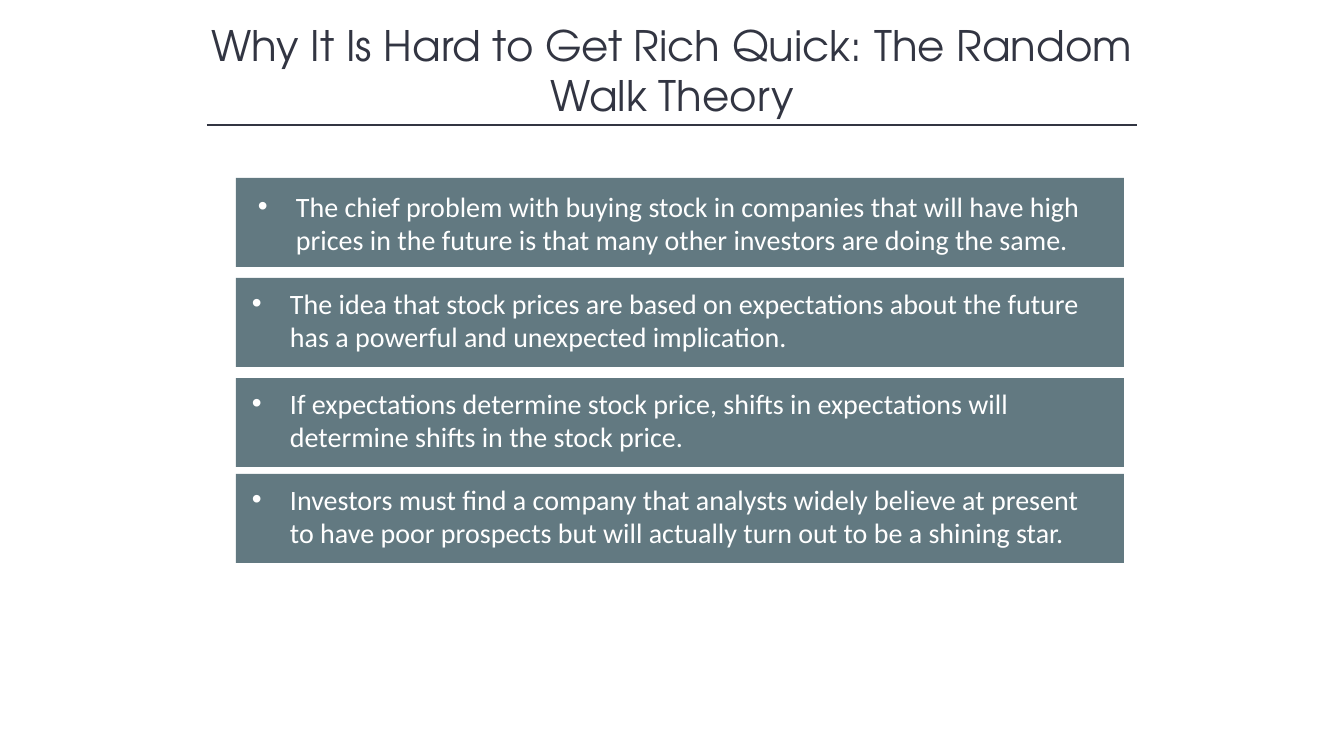
"""Build the random walk theory slide: a ruled title above four bulleted bars."""
from lxml.etree import SubElement
from pptx import Presentation
from pptx.dml.color import RGBColor
from pptx.enum.shapes import MSO_CONNECTOR, MSO_SHAPE
from pptx.enum.text import MSO_ANCHOR, PP_ALIGN
from pptx.oxml.ns import qn
from pptx.util import Pt

TITLE = "Why It Is Hard to Get Rich Quick: The Random Walk Theory"
POINTS = [
    (178, 12, 6, "The chief problem with buying stock in companies that will have high "
     "prices in the future is that many other investors are doing the same."),
    (278, 6, 3, "The idea that stock prices are based on expectations about the future "
     "has a powerful and unexpected implication."),
    (378, 6, 3, "If expectations determine stock price, shifts in expectations will "
     "determine shifts in the stock price."),
    (474, 6, 3, "Investors must find a company that analysts widely believe at present "
     "to have poor prospects but will actually turn out to be a shining star."),
]
BAR_LEFT, BAR_W, BAR_H = 236, 888, 89
TEXT_W, TEXT_H = 861, 78
INDENT = 38

INK = RGBColor(0x32, 0x35, 0x42)
SLATE = RGBColor(0x62, 0x79, 0x81)
WHITE = RGBColor(0xFF, 0xFF, 0xFF)


def px(*lengths):
    return [round(n * 914400 / 100.8) for n in lengths]


def put_text(shape, text, size, font, color, align=PP_ALIGN.LEFT,
             anchor=MSO_ANCHOR.TOP, bullet=None):
    tf = shape.text_frame
    tf.word_wrap = True
    tf.vertical_anchor = anchor
    tf.margin_left, tf.margin_right, tf.margin_top, tf.margin_bottom = px(10, 10, 5, 5)
    p = tf.paragraphs[0]
    p.alignment = align
    p.line_spacing = 1.0
    p.space_before = Pt(0)
    if bullet:
        pPr = p._p.get_or_add_pPr()
        indent = px(INDENT)[0]
        pPr.set("marL", str(indent))
        pPr.set("indent", str(-indent))
        SubElement(pPr, qn("a:buFont"), typeface="Arial")
        SubElement(pPr, qn("a:buChar"), char=bullet)
    r = p.add_run()
    r.text = text
    r.font.size = Pt(size)
    r.font.name = font
    r.font.color.rgb = color


def add_bar(shapes, left, top, width, height):
    sp = shapes.add_shape(MSO_SHAPE.RECTANGLE, *px(left, top, width, height))
    sp.shadow.inherit = False
    sp.fill.solid()
    sp.fill.fore_color.rgb = SLATE
    sp.line.fill.background()
    return sp


def main():
    prs = Presentation()
    prs.slide_width, prs.slide_height = px(1344, 756)
    s = prs.slides.add_slide(prs.slide_layouts[5])

    title = s.shapes.title
    title.left, title.top, title.width, title.height = px(168, 14, 1008, 112)
    put_text(title, TITLE, 30, "TeX Gyre Adventor", INK,
             align=PP_ALIGN.CENTER, anchor=MSO_ANCHOR.MIDDLE)

    rule = s.shapes.add_connector(MSO_CONNECTOR.STRAIGHT, *px(207, 125, 1137, 125))
    rule.line.color.rgb = INK
    rule.line.width = Pt(1)
    SubElement(rule._element.spPr, qn("a:effectLst"))

    for top, dx, dy, text in POINTS:
        group = s.shapes.add_group_shape()
        add_bar(group.shapes, BAR_LEFT, top, BAR_W, BAR_H)
        label = add_bar(group.shapes, BAR_LEFT + dx, top + dy, TEXT_W, TEXT_H)
        put_text(label, text, 20, "Calibri", WHITE, bullet="•")

    prs.save("out.pptx")


if __name__ == "__main__":
    main()
